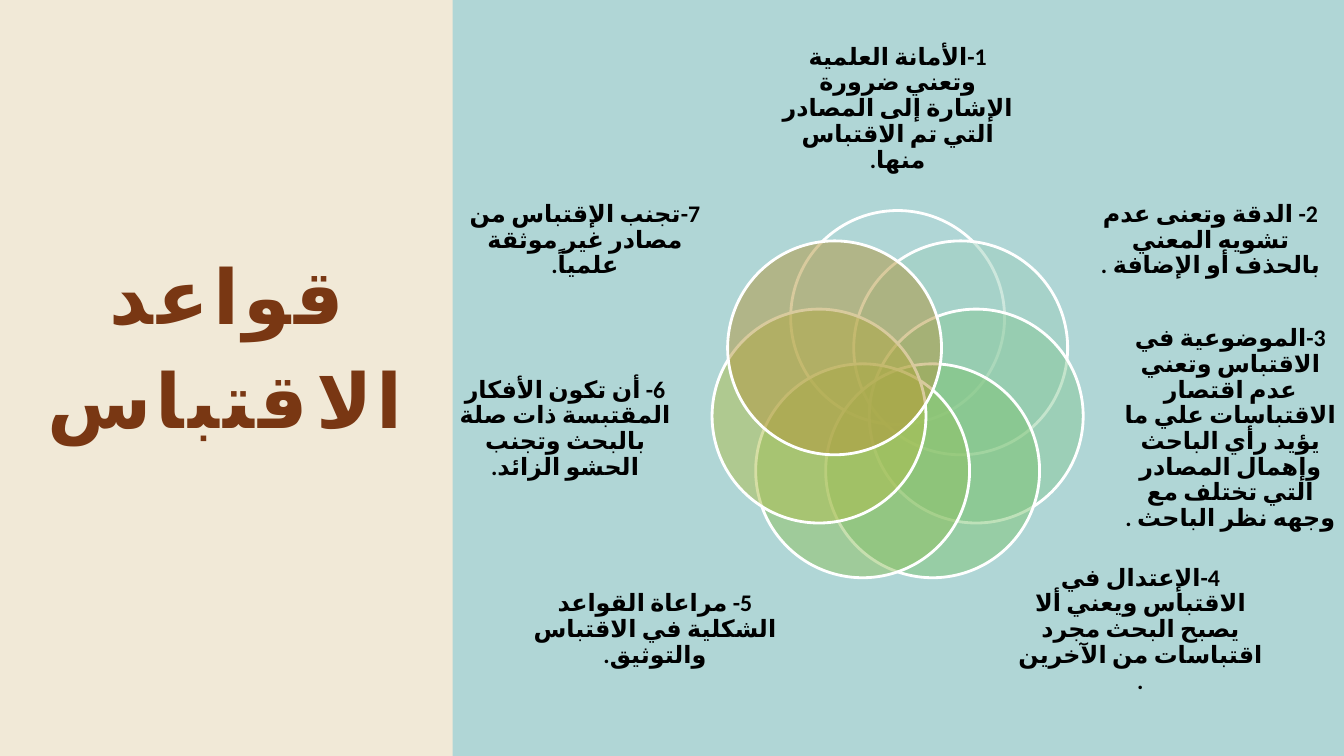
"""Build the slide on the rules of quotation: seven overlapping circles with labels."""
from dataclasses import dataclass
from math import cos, pi, sin

from lxml.etree import SubElement
from pptx import Presentation
from pptx.dml.color import RGBColor
from pptx.enum.shapes import MSO_SHAPE
from pptx.enum.text import MSO_ANCHOR, MSO_AUTO_SIZE, PP_ALIGN
from pptx.oxml.ns import qn
from pptx.shapes.autoshape import Shape
from pptx.slide import Slide
from pptx.text.text import TextFrame
from pptx.util import Pt

COLORS = {
    "background": "F1E9D7",
    "panel": "B0D6D6",
    "title": "793713",
    "label": "000000",
    "outline": "FFFFFF",
}
FONT = "Calibri"
LANGUAGE = "ar-EG"
CENTER_X, CENTER_Y = 641.2, 284.4
ORBIT = 57.6
DIAMETER = 152.8


@dataclass(frozen=True)
class LabelSlot:
    """Label box whose middle lies `offset` points from the wheel's axis."""
    offset: float
    top: float
    width: float
    height: float

    def mirrored(self) -> "LabelSlot":
        """Return the slot on the other side of the axis."""
        return LabelSlot(-self.offset, self.top, self.width, self.height)


@dataclass(frozen=True)
class Rule:
    """One rule of quotation and the colour of its circle."""
    text: str
    color: str


TOP_SLOT = LabelSlot(0, 31, 175, 93.6)
RIGHT_SLOTS = [
    LabelSlot(223.4, 120.2, 165.6, 103),
    LabelSlot(237.6, 251.3, 162.7, 110.2),
    LabelSlot(173.4, 399.6, 175, 100.8),
]
SLOTS = [TOP_SLOT, *RIGHT_SLOTS, *(slot.mirrored() for slot in reversed(RIGHT_SLOTS))]

RULES = [
    Rule("1-الأمانة العلمية وتعني ضرورة الإشارة إلى المصادر التي تم الاقتباس منها.", "B0D6D6"),
    Rule("2- الدقة وتعنى عدم تشويه المعني بالحذف أو الإضافة .", "9DD0BD"),
    Rule("3-الموضوعية في الاقتباس وتعني عدم اقتصار الاقتباسات علي ما يؤيد رأي الباحث "
         "وإهمال المصادر التي تختلف مع وجهه نظر الباحث .", "8ACA9A"),
    Rule("4-الإعتدال في الاقتباس ويعني ألا يصبح البحث مجرد اقتباسات من الآخرين .", "7FC575"),
    Rule("5- مراعاة القواعد الشكلية في الاقتباس والتوثيق.", "90C160"),
    Rule("6- أن تكون الأفكار المقتبسة ذات صلة بالبحث وتجنب الحشو الزائد.", "AFBE4B"),
    Rule("7-تجنب الإقتباس من مصادر غير موثقة علمياً.", "B3963C"),
]


def write_arabic(frame: TextFrame, text: str, size: float, color: str,
                 line_spacing: float, space_after: float) -> None:
    """Fill a text frame with one centred, bold, right-to-left paragraph."""
    frame.word_wrap = True
    frame.auto_size = MSO_AUTO_SIZE.NONE
    frame.vertical_anchor = MSO_ANCHOR.MIDDLE
    frame.text = text
    para = frame.paragraphs[0]
    para.alignment = PP_ALIGN.CENTER
    para.line_spacing = line_spacing
    para.space_after = Pt(space_after)
    para.font.name = FONT
    para.font.size = Pt(size)
    para.font.bold = True
    para.font.color.rgb = RGBColor.from_string(color)
    para._p.get_or_add_pPr().set("rtl", "1")
    properties = para.runs[0]._r.get_or_add_rPr()
    properties.set("lang", LANGUAGE)
    SubElement(properties, qn("a:cs")).set("typeface", FONT)


def add_filled(page: Slide, kind: MSO_SHAPE, left: float, top: float,
               width: float, height: float, color: str) -> Shape:
    """Add a shape with a solid fill and no shadow."""
    shape = page.shapes.add_shape(kind, Pt(left), Pt(top), Pt(width), Pt(height))
    shape.shadow.inherit = False
    shape.fill.solid()
    shape.fill.fore_color.rgb = RGBColor.from_string(color)
    return shape


def add_circle(page: Slide, index: int, rule: Rule) -> None:
    """Add the half-transparent circle at its clockwise step around the wheel."""
    angle = 2 * pi * index / len(RULES)
    left = CENTER_X + ORBIT * sin(angle) - DIAMETER / 2
    top = CENTER_Y - ORBIT * cos(angle) - DIAMETER / 2
    circle = add_filled(page, MSO_SHAPE.OVAL, left, top, DIAMETER, DIAMETER, rule.color)
    circle.line.color.rgb = RGBColor.from_string(COLORS["outline"])
    circle.line.width = Pt(2)
    fill_color = circle._element.spPr.find(qn("a:solidFill"))[0]
    SubElement(fill_color, qn("a:alpha")).set("val", "50000")


def add_label(page: Slide, slot: LabelSlot, rule: Rule) -> None:
    """Add the text of a rule in its slot."""
    left = CENTER_X + slot.offset - slot.width / 2
    box = page.shapes.add_textbox(Pt(left), Pt(slot.top), Pt(slot.width), Pt(slot.height))
    frame = box.text_frame
    frame.margin_left = frame.margin_right = frame.margin_top = frame.margin_bottom = 0
    write_arabic(frame, rule.text, 17, COLORS["label"], 0.9, 6)


def add_title(page: Slide) -> None:
    """Place and format the title placeholder."""
    title = page.shapes.title
    title.left, title.top, title.width, title.height = Pt(10), Pt(150.5), Pt(301.7), Pt(184.3)
    write_arabic(title.text_frame, "قواعد الاقتباس", 54, COLORS["title"], 1.15, 8)
    span = title.text_frame.paragraphs[0].runs[0]
    span._r.get_or_add_rPr().set("spc", "300")


def main() -> None:
    """Build and save the deck."""
    deck = Presentation()
    deck.slide_width, deck.slide_height = Pt(960), Pt(540)
    page = deck.slides.add_slide(deck.slide_layouts[5])
    page.background.fill.solid()
    page.background.fill.fore_color.rgb = RGBColor.from_string(COLORS["background"])
    panel = add_filled(page, MSO_SHAPE.RECTANGLE, 323.4, 0, 636.6, 540, COLORS["panel"])
    panel.line.fill.background()
    add_title(page)
    for index, (slot, rule) in enumerate(zip(SLOTS, RULES)):
        add_circle(page, index, rule)
        add_label(page, slot, rule)
    deck.save("out.pptx")


if __name__ == "__main__":
    main()
